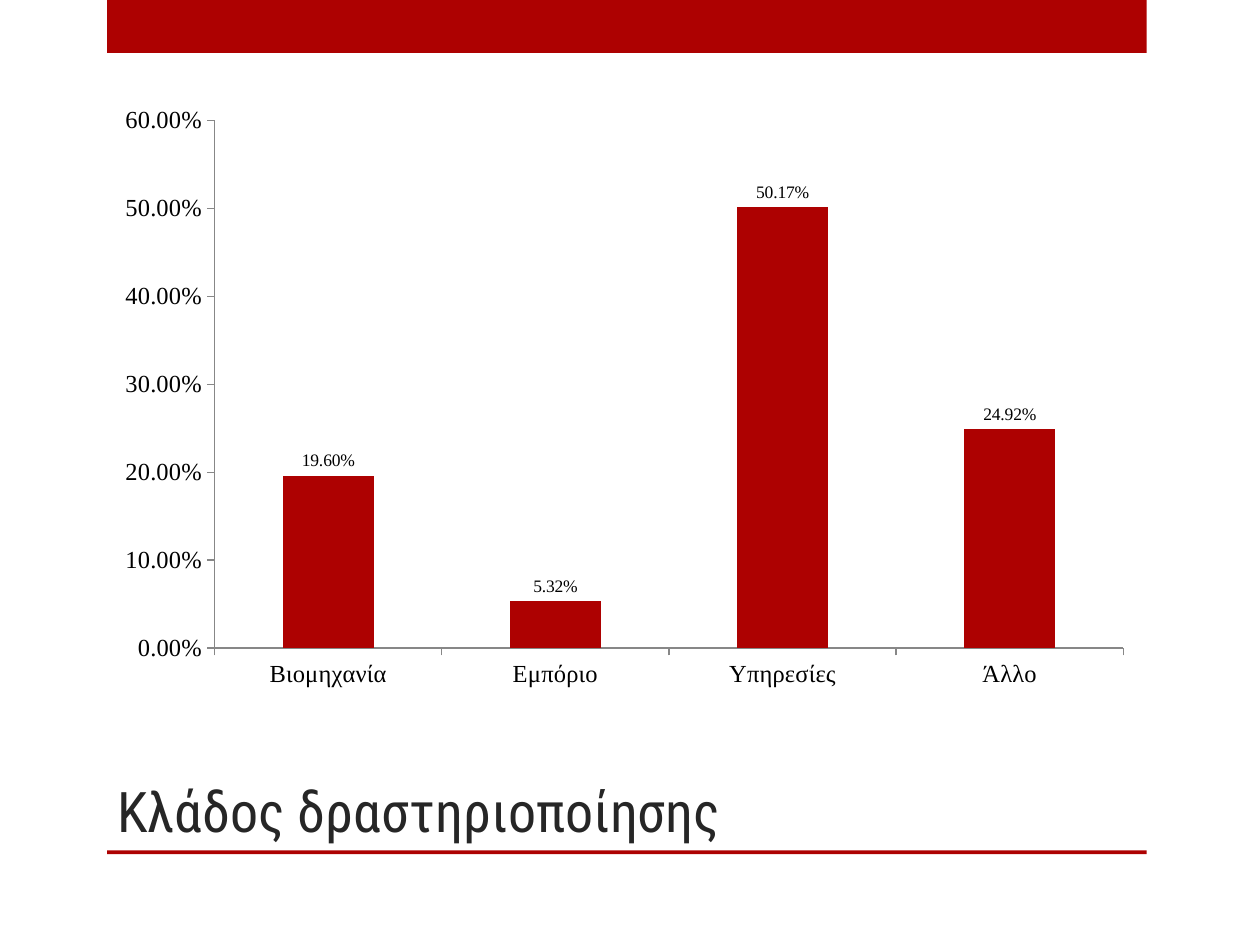
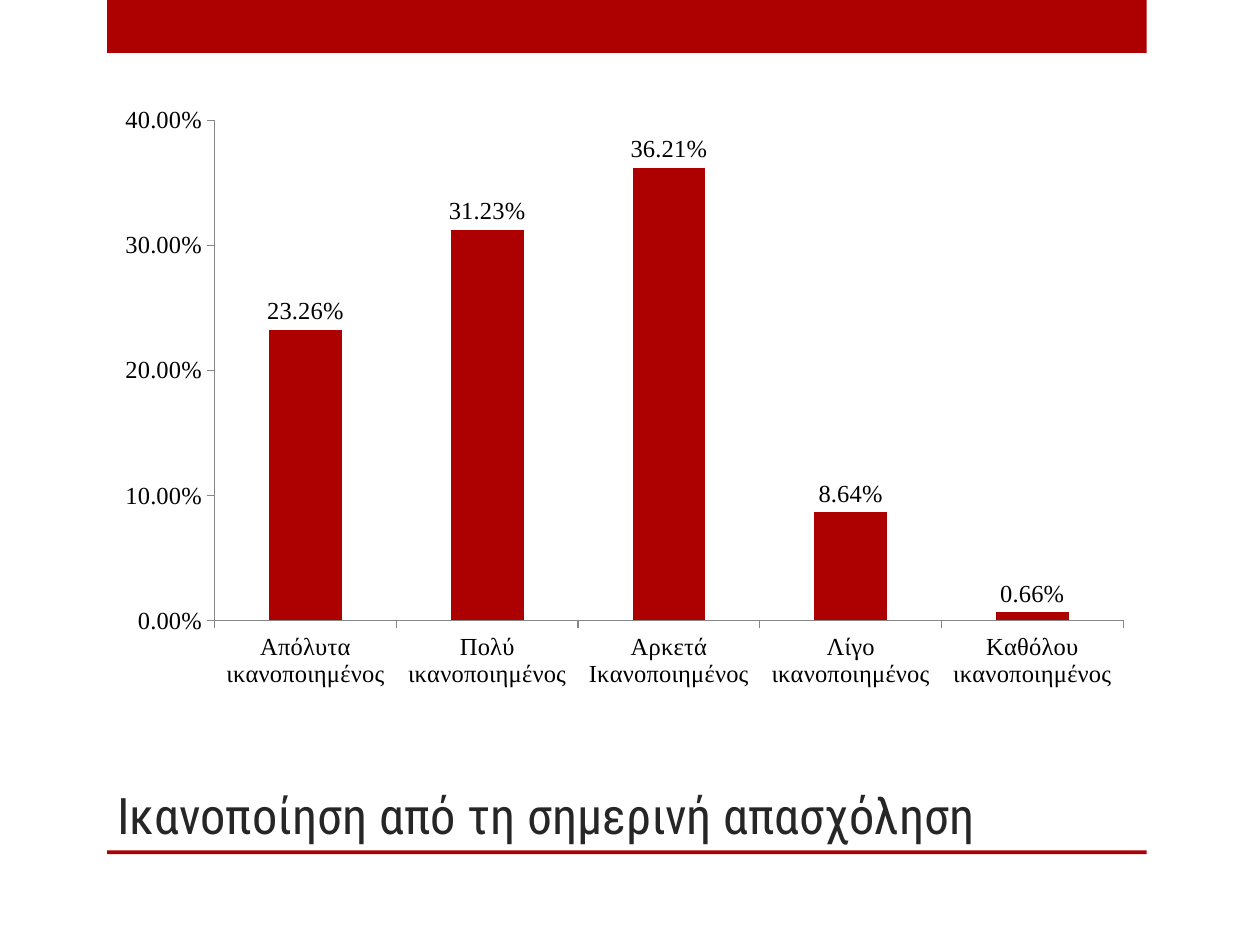
import pptx
import pptx.chart.data
import pptx.dml.color
import pptx.enum.chart
import pptx.enum.shapes
import pptx.enum.text
import pptx.util

COLORS = {"red": "AD0101", "title": "262626", "text": "000000", "axis": "878787"}
FONTS = {"title": "Roboto Condensed", "chart": "Times New Roman"}
WIDTH, HEIGHT = pptx.util.Inches(10), pptx.util.Inches(7.5)
PERCENT = "0.00%"

TITLE_BOX = (0.083, 0.752, 0.742, 0.148)
CHART_BOX = (0.083, 0.1, 0.825, 0.641)
BANDS = [(0.085, 0, 0.825, 0.056), (0.085, 0.9, 0.825, 0.004)]

SURVEY = [
    {
        "title": "Κλάδος δραστηριοποίησης",
        "title_size": 32,
        "label_size": 10,
        "maximum": 0.6,
        "answers": {
            "Βιομηχανία": 0.196,
            "Εμπόριο": 0.0532,
            "Υπηρεσίες": 0.5017,
            "Άλλο": 0.2492,
        },
    },
    {
        "title": "Ικανοποίηση από τη σημερινή απασχόληση",
        "title_size": 28.8,
        "label_size": 14,
        "maximum": 0.4,
        "answers": {
            "Απόλυτα ικανοποιημένος": 0.2326,
            "Πολύ ικανοποιημένος": 0.3123,
            "Αρκετά Ικανοποιημένος": 0.3621,
            "Λίγο ικανοποιημένος": 0.0864,
            "Καθόλου ικανοποιημένος": 0.0066,
        },
    },
]


def color(name):
    return pptx.dml.color.RGBColor.from_string(COLORS[name])


def place(box):
    left, top, width, height = box
    return int(left * WIDTH), int(top * HEIGHT), int(width * WIDTH), int(height * HEIGHT)


def paint(fill, name):
    fill.solid()
    fill.fore_color.rgb = color(name)


def style_font(font, face, size, name):
    font.name = FONTS[face]
    font.size = pptx.util.Pt(size)
    font.color.rgb = color(name)


def add_band(slide, box):
    band = slide.shapes.add_shape(pptx.enum.shapes.MSO_SHAPE.RECTANGLE, *place(box))
    paint(band.fill, "red")
    band.line.fill.background()
    band.shadow.inherit = False


def set_title(slide, wording, size):
    title = slide.shapes.title
    title.left, title.top, title.width, title.height = place(TITLE_BOX)
    frame = title.text_frame
    frame.text = wording
    frame.auto_size = pptx.enum.text.MSO_AUTO_SIZE.NONE
    frame.vertical_anchor = pptx.enum.text.MSO_ANCHOR.BOTTOM
    heading = frame.paragraphs[0]
    heading.alignment = pptx.enum.text.PP_ALIGN.LEFT
    style_font(heading.runs[0].font, "title", size, "title")


def style_axis(axis):
    axis.has_major_gridlines = False
    axis.major_tick_mark = pptx.enum.chart.XL_TICK_MARK.OUTSIDE
    axis.minor_tick_mark = pptx.enum.chart.XL_TICK_MARK.NONE
    axis.format.line.color.rgb = color("axis")
    style_font(axis.tick_labels.font, "chart", 14, "text")


def style_percent(labels):
    labels.number_format = PERCENT
    labels.number_format_is_linked = False


def add_answer_chart(slide, answers, maximum, label_size):
    data = pptx.chart.data.CategoryChartData(number_format=PERCENT)
    data.categories = list(answers)
    data.add_series("Series 1", list(answers.values()))
    chart = slide.shapes.add_chart(
        pptx.enum.chart.XL_CHART_TYPE.COLUMN_CLUSTERED, *place(CHART_BOX), data
    ).chart
    chart.has_title = False
    chart.has_legend = False
    style_font(chart.font, "chart", 18, "text")

    style_axis(chart.category_axis)
    shares = chart.value_axis
    style_axis(shares)
    style_percent(shares.tick_labels)
    shares.minimum_scale = 0
    shares.maximum_scale = maximum
    shares.major_unit = 0.1

    columns = chart.plots[0]
    columns.gap_width = 150
    columns.vary_by_categories = False
    series = columns.series[0]
    paint(series.format.fill, "red")
    labels = series.data_labels
    labels.show_value = True
    labels.position = pptx.enum.chart.XL_LABEL_POSITION.OUTSIDE_END
    style_percent(labels)
    style_font(labels.font, "chart", label_size, "text")


def add_question(deck, question):
    slide = deck.slides.add_slide(deck.slide_layouts.get_by_name("Title Only"))
    for box in BANDS:
        add_band(slide, box)
    set_title(slide, question["title"], question["title_size"])
    add_answer_chart(
        slide, question["answers"], question["maximum"], question["label_size"]
    )


def main():
    deck = pptx.Presentation()
    deck.slide_width, deck.slide_height = WIDTH, HEIGHT
    for question in SURVEY:
        add_question(deck, question)
    deck.save("out.pptx")


if __name__ == "__main__":
    main()
